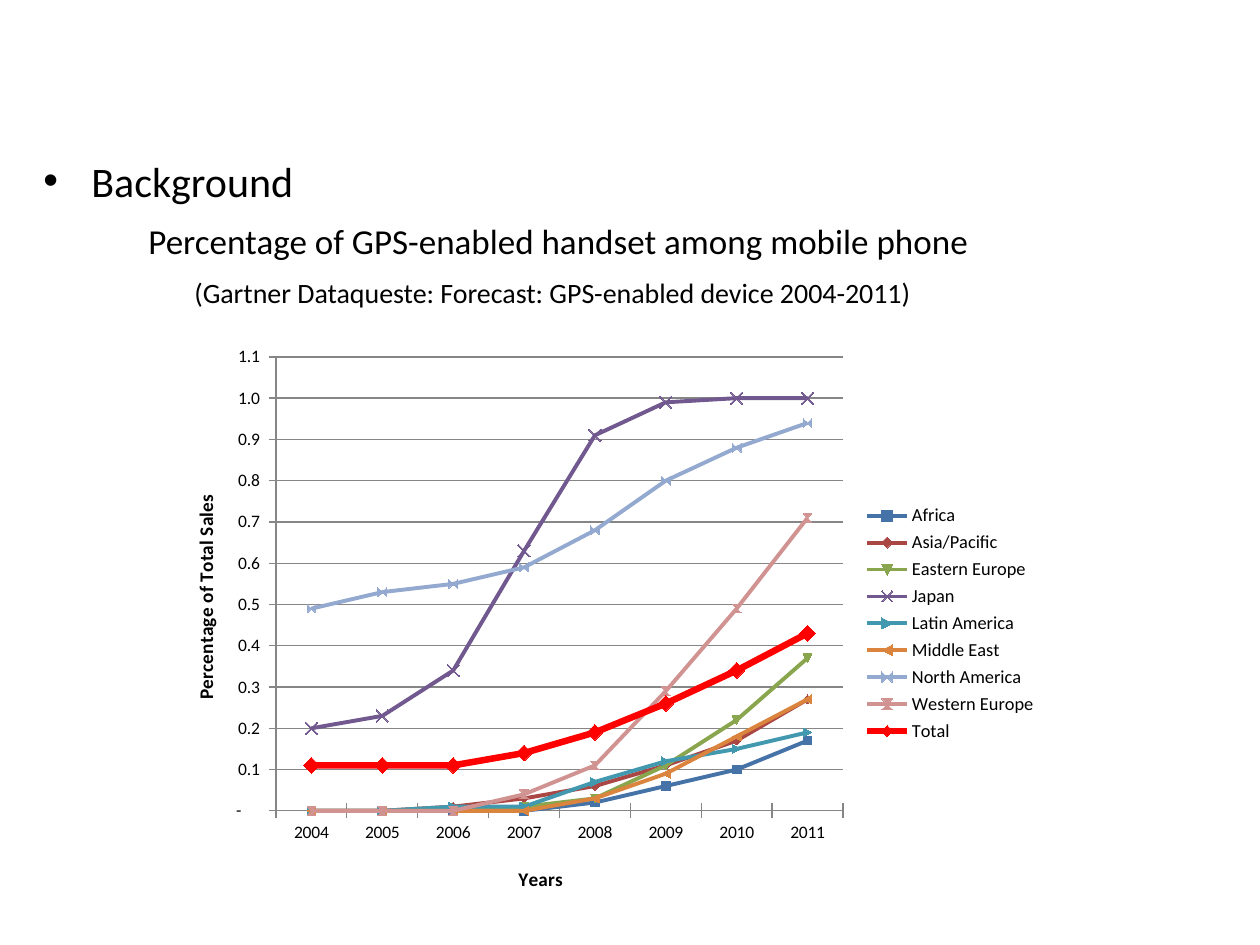
from lxml.etree import SubElement
from pptx import Presentation
from pptx.chart.data import CategoryChartData
from pptx.dml.color import RGBColor
from pptx.enum.chart import (XL_CHART_TYPE, XL_LEGEND_POSITION,
                             XL_MARKER_STYLE, XL_TICK_MARK)
from pptx.oxml import parse_xml
from pptx.oxml.ns import nsdecls, qn
from pptx.util import Pt

PX = 914400 / 126
FONT = "Calibri"
COLORS = {
    "text": "000000", "grid": "868686",
    "Africa": "4572A7", "Asia/Pacific": "AA4643", "Eastern Europe": "89A54E",
    "Japan": "71588F", "Latin America": "4198AF", "Middle East": "DB843D",
    "North America": "93A9CF", "Western Europe": "D19392", "Total": "FF0000",
}
# text, size in points, left margin, first-line indent, bullet
LINES = [
    ("Background", 24, 48, -48, "•"),
    ("Percentage of GPS-enabled handset among mobile phone", 20, 105, 0, None),
    ("(Gartner Dataqueste: Forecast: GPS-enabled device 2004-2011)",
     16, 151, 0, None),
]
YEARS = [str(year) for year in range(2004, 2012)]
SHARES = {
    "Africa": (0, 0, 0, 0, 0.02, 0.06, 0.1, 0.17),
    "Asia/Pacific": (0, 0, 0.01, 0.03, 0.06, 0.11, 0.17, 0.27),
    "Eastern Europe": (0, 0, 0, 0.01, 0.03, 0.11, 0.22, 0.37),
    "Japan": (0.2, 0.23, 0.34, 0.63, 0.91, 0.99, 1, 1),
    "Latin America": (0, 0, 0.01, 0.01, 0.07, 0.12, 0.15, 0.19),
    "Middle East": (0, 0, 0, 0, 0.03, 0.09, 0.18, 0.27),
    "North America": (0.49, 0.53, 0.55, 0.59, 0.68, 0.8, 0.88, 0.94),
    "Western Europe": (0, 0, 0, 0.04, 0.11, 0.29, 0.49, 0.71),
    "Total": (0.11, 0.11, 0.11, 0.14, 0.19, 0.26, 0.34, 0.43),
}
# line width, marker style, marker size
PLAIN = (2.25, None, 5)
STYLES = {
    "Japan": (2.25, XL_MARKER_STYLE.X, 7),
    "Total": (3.75, XL_MARKER_STYLE.DIAMOND, 9),
}
NUMBERS = r'_(* #,##0.0_);_(* \(#,##0.0\);_(* "-"??_);_(@_)'
BODY = (31, 149, 1134, 680)
CHART = (157, 336, 892, 575)
# chart part: child index of its layout, place on the slide
PLACES = {
    "c:plotArea": (0, (276, 357, 567, 454)),
    "c:legend": (1, (863, 500, 175, 247)),
    "c:catAx/c:title": (1, (515, 862)),
    "c:valAx/c:title": (1, (189, 491)),
}


def emu(*lengths):
    return [round(length * PX) for length in lengths]


def rgb(name):
    return RGBColor.from_string(COLORS[name])


def style(font, size, bold=False):
    font.name, font.size, font.bold = FONT, Pt(size), bold
    font.color.rgb = rgb("text")


def add_body(slide):
    frame = slide.shapes.add_textbox(*emu(*BODY)).text_frame
    frame.word_wrap = True
    for i, (text, size, margin, indent, bullet) in enumerate(LINES):
        para = frame.paragraphs[0] if i == 0 else frame.add_paragraph()
        para.text = text
        if i:
            para.space_before = Pt(8)
        props = para._p.get_or_add_pPr()
        left, first = emu(margin, indent)
        props.set("marL", str(left))
        props.set("indent", str(first))
        if bullet:
            SubElement(props, qn("a:buFont")).set("typeface", "Arial")
            SubElement(props, qn("a:buChar")).set("char", bullet)
        style(para.font, size)


def set_axis(axis, title):
    axis.has_title = True
    frame = axis.axis_title.text_frame
    frame.text = title
    style(frame.paragraphs[0].font, 11, True)
    style(axis.tick_labels.font, 10)
    axis.major_tick_mark = XL_TICK_MARK.CROSS
    axis.minor_tick_mark = XL_TICK_MARK.NONE
    axis.format.line.color.rgb = rgb("grid")
    axis.format.line.width = Pt(0.75)


def place(chart, part, index, box):
    """Fix a chart part at a place given in slide px."""
    node = chart.element.xpath(f".//{part}")[0]
    for old in node.findall(qn("c:layout")):
        node.remove(old)
    layout = parse_xml(f"<c:layout {nsdecls('c')}><c:manualLayout/></c:layout>")
    inner = layout[0]
    if part == "c:plotArea":
        SubElement(inner, qn("c:layoutTarget")).set("val", "inner")
    for key in ("xMode", "yMode"):
        SubElement(inner, qn(f"c:{key}")).set("val", "edge")
    left, top, width, height = CHART
    ratios = zip("xywh", box, (left, top, 0, 0), (width, height) * 2)
    for key, value, start, full in ratios:
        share = (value - start) / full
        SubElement(inner, qn(f"c:{key}")).set("val", f"{share:.4f}")
    node.insert(index, layout)


def add_chart(slide):
    data = CategoryChartData(number_format="0.00")
    data.categories = YEARS
    for name, values in SHARES.items():
        data.add_series(name, values)
    chart = slide.shapes.add_chart(
        XL_CHART_TYPE.LINE_MARKERS, *emu(*CHART), data).chart
    style(chart.font, 10)
    chart.has_title = False
    chart.plots[0].vary_by_categories = False

    for series in chart.plots[0].series:
        width, symbol, size = STYLES.get(series.name, PLAIN)
        color = rgb(series.name)
        series.smooth = False
        series.format.line.color.rgb = color
        series.format.line.width = Pt(width)
        marker = series.marker
        marker.size = size
        if symbol is not None:
            marker.style = symbol
        marker.format.fill.solid()
        marker.format.fill.fore_color.rgb = color
        marker.format.line.color.rgb = color

    set_axis(chart.category_axis, "Years")
    axis = chart.value_axis
    set_axis(axis, "Percentage of Total Sales")
    axis.minimum_scale, axis.maximum_scale, axis.major_unit = 0, 1.1, 0.1
    axis.tick_labels.number_format = NUMBERS
    axis.tick_labels.number_format_is_linked = False
    axis.has_major_gridlines = True
    axis.major_gridlines.format.line.color.rgb = rgb("grid")
    axis.major_gridlines.format.line.width = Pt(0.75)
    turn = chart.element.xpath(".//c:valAx/c:title//a:bodyPr")[0]
    turn.set("rot", "-5400000")
    turn.set("vert", "horz")

    chart.has_legend = True
    chart.legend.position = XL_LEGEND_POSITION.RIGHT
    chart.legend.include_in_layout = False
    style(chart.legend.font, 10.5)
    for part, (index, box) in PLACES.items():
        place(chart, part, index, box)


def main():
    deck = Presentation()
    deck.slide_width, deck.slide_height = emu(1260, 945)
    slide = deck.slides.add_slide(deck.slide_layouts[6])
    add_chart(slide)
    add_body(slide)
    deck.save("out.pptx")


if __name__ == "__main__":
    main()
